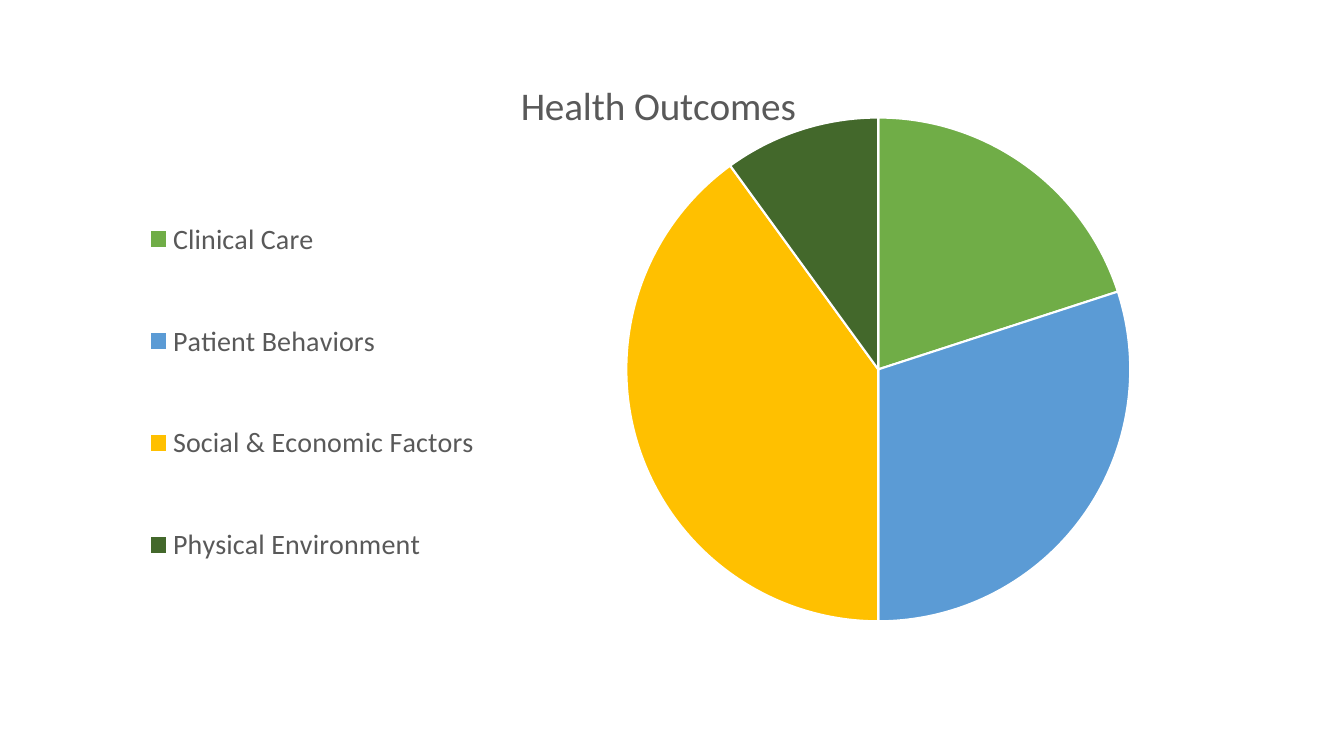
from dataclasses import dataclass

from lxml import etree
from pptx import Presentation
from pptx.chart.data import CategoryChartData
from pptx.dml.color import RGBColor
from pptx.enum.chart import XL_CHART_TYPE, XL_LEGEND_POSITION
from pptx.oxml.ns import qn
from pptx.util import Inches, Pt

PIE = XL_CHART_TYPE.PIE
LEGEND_BOTTOM = XL_LEGEND_POSITION.BOTTOM
BLANK_LAYOUT = 6


@dataclass(frozen=True)
class Theme:
    font: str = "Calibri"
    text: str = "595959"
    background: str = "FFFFFF"
    slice_border: str = "FFFFFF"
    title_size: int = 28
    legend_size: int = 20
    border_width: float = 1.5


THEME = Theme()
TITLE = "Health Outcomes"
# Category: (share in percent, slice colour)
FACTORS = {
    "Clinical Care": (20, "70AD47"),
    "Patient Behaviors": (30, "5B9BD5"),
    "Social & Economic Factors": (40, "FFC000"),
    "Physical Environment": (10, "43682B"),
}


def format_font(font, size):
    font.name = THEME.font
    font.size = Pt(size)
    font.bold = False
    font.color.rgb = RGBColor.from_string(THEME.text)


def set_layout(parent, predecessors, inner=False, **fractions):
    """Place a chart part by fractions of the chart area."""
    for old in parent.findall(qn("c:layout")):
        parent.remove(old)
    layout = etree.Element(qn("c:layout"))
    manual = etree.SubElement(layout, qn("c:manualLayout"))
    settings = {"layoutTarget": "inner"} if inner else {}
    settings.update(xMode="edge", yMode="edge", **fractions)
    for name, value in settings.items():
        etree.SubElement(manual, qn(f"c:{name}")).set("val", str(value))
    tags = [qn(f"c:{name}") for name in predecessors]
    position = sum(child.tag in tags for child in parent)
    parent.insert(position, layout)


def add_title(chart):
    frame = chart.chart_title.text_frame
    frame.text = TITLE
    format_font(frame.paragraphs[0].runs[0].font, THEME.title_size)
    chart.chart_title.include_in_layout = False
    title = chart._chartSpace.chart.find(qn("c:title"))
    set_layout(title, ["tx"], x=0.378, y=0.028)


def add_legend(chart):
    chart.has_legend = True
    legend = chart.legend
    legend.position = LEGEND_BOTTOM
    legend.include_in_layout = False
    format_font(legend.font, THEME.legend_size)
    set_layout(legend._element, ["legendPos", "legendEntry"],
               x=0.063, y=0.16, w=0.29, h=0.757)


def color_slices(series):
    for index, (_, color) in enumerate(FACTORS.values()):
        pie_slice = series.points[index].format
        pie_slice.fill.solid()
        pie_slice.fill.fore_color.rgb = RGBColor.from_string(color)
        pie_slice.line.color.rgb = RGBColor.from_string(THEME.slice_border)
        pie_slice.line.width = Pt(THEME.border_width)


def add_outcomes_pie(page, left, top, width, height):
    data = CategoryChartData()
    data.categories = list(FACTORS)
    data.add_series(TITLE, [share for share, _ in FACTORS.values()])
    chart = page.shapes.add_chart(
        PIE, Inches(left), Inches(top), Inches(width), Inches(height), data
    ).chart
    chart.font.name = THEME.font
    chart.plots[0].vary_by_categories = True

    # Title above, legend at left, pie at right
    add_title(chart)
    add_legend(chart)
    set_layout(chart._chartSpace.chart.plotArea, [], inner=True,
               x=0.473, y=0.1, w=0.425, h=0.805)
    color_slices(chart.plots[0].series[0])


def main():
    deck = Presentation()
    deck.slide_width = Inches(13.33)
    deck.slide_height = Inches(7.5)
    page = deck.slides.add_slide(deck.slide_layouts[BLANK_LAYOUT])
    page.background.fill.solid()
    page.background.fill.fore_color.rgb = RGBColor.from_string(THEME.background)
    add_outcomes_pie(page, 0.65, 0.54, 11.76, 6.22)
    deck.save("out.pptx")


if __name__ == "__main__":
    main()
